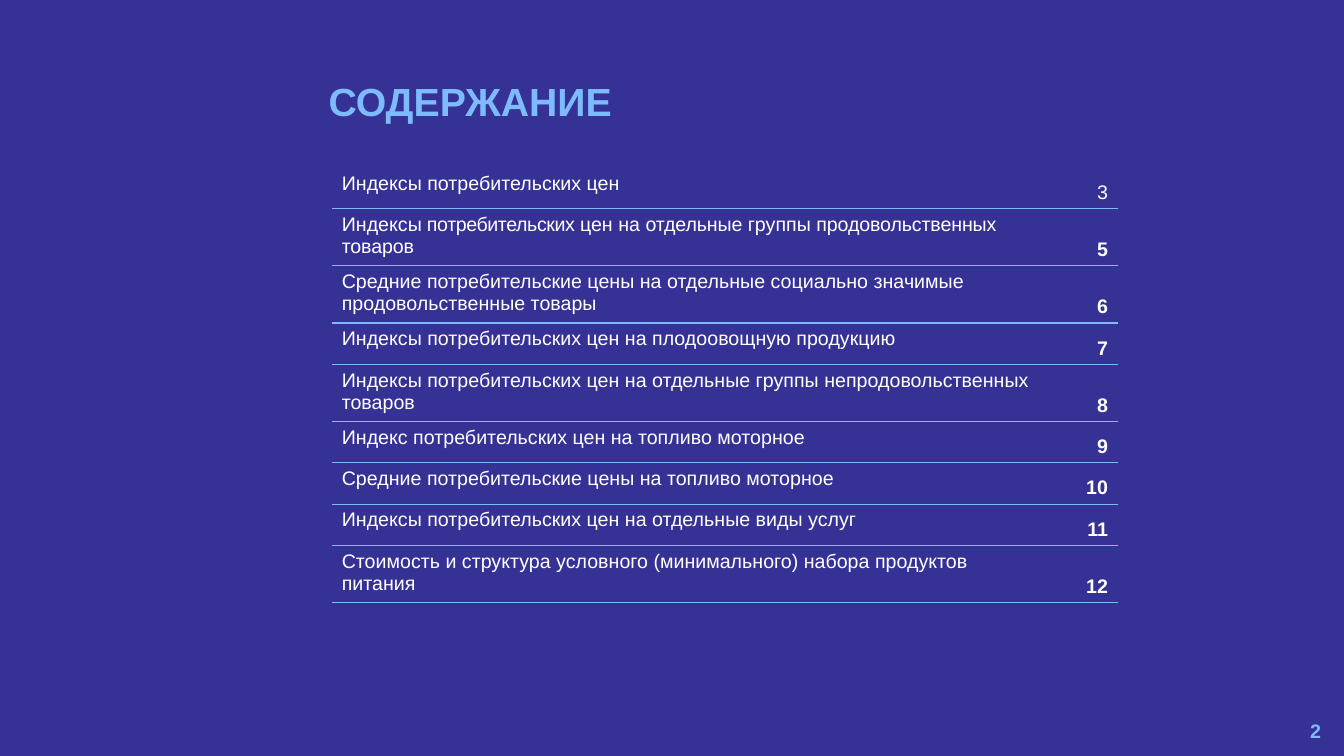
import pptx
import pptx.util
import pptx.dml.color
import pptx.enum.text
import pptx.oxml.ns
import lxml.etree

Inches = pptx.util.Inches
Pt = pptx.util.Pt
RGBColor = pptx.dml.color.RGBColor
PP_ALIGN = pptx.enum.text.PP_ALIGN
MSO_ANCHOR = pptx.enum.text.MSO_ANCHOR
qn = pptx.oxml.ns.qn

INDIGO = RGBColor(0x36, 0x31, 0x94)
SKY = RGBColor(0x7D, 0xBB, 0xFC)
WHITE = RGBColor(0xFF, 0xFF, 0xFF)
FONT = "Arial"

CONTENTS = [
    ([("Индексы потребительских цен", 0)], 3),
    ([("Индексы", 0), (" потребительских ", -30), ("цен на ", 0),
      ("отдельные ", -10), ("группы ", 0),
      ("продовольственных товаров", -10)], 5),
    ([("Средние потребительские цены на отдельные социально значимые "
       "продовольственные товары", 0)], 6),
    ([("Индексы потребительских цен на плодоовощную продукцию", 0)], 7),
    ([("Индексы потребительских цен на отдельные группы "
       "непродовольственных товаров", 0)], 8),
    ([("Индекс потребительских цен на топливо моторное", 0)], 9),
    ([("Средние потребительские цены на топливо моторное", 0)], 10),
    ([("Индексы потребительских цен на отдельные виды услуг", 0)], 11),
    ([("Стоимость и структура условного (минимального) набора "
       "продуктов питания", 0)], 12),
]


def style_run(r, size, color, bold=False):
    r.font.name = FONT
    r.font.size = Pt(size)
    r.font.bold = bold
    r.font.color.rgb = color


def add_label(slide, box, text, size, align, anchor):
    sp = slide.shapes.add_textbox(*[Inches(v) for v in box])
    tf = sp.text_frame
    tf.word_wrap = True
    tf.vertical_anchor = anchor
    tf.text = text
    p = tf.paragraphs[0]
    p.alignment = align
    style_run(p.runs[0], size, SKY, True)
    return p


def add_border(cell, side, color=None):
    ln = lxml.etree.SubElement(cell._tc.get_or_add_tcPr(), qn("a:ln" + side))
    if color is None:
        ln.set("w", "0")
        lxml.etree.SubElement(ln, qn("a:noFill"))
    else:
        ln.set("w", str(Pt(1)))
        fill = lxml.etree.SubElement(ln, qn("a:solidFill"))
        lxml.etree.SubElement(fill, qn("a:srgbClr")).set("val", str(color))


def add_contents(slide, left, top, title_width, page_width, row_height):
    sp = slide.shapes.add_table(
        len(CONTENTS), 2, Inches(left), Inches(top),
        Inches(title_width + page_width), Inches(row_height * len(CONTENTS)))
    table = sp.table
    table.first_row = False
    table.horz_banding = False
    table.columns[0].width = Inches(title_width)
    table.columns[1].width = Inches(page_width)
    for i, (parts, page) in enumerate(CONTENTS):
        table.rows[i].height = Inches(row_height)
        title_cell, page_cell = table.cell(i, 0), table.cell(i, 1)
        for cell in (title_cell, page_cell):
            add_border(cell, "L")
            add_border(cell, "R")
            add_border(cell, "T", SKY if i else None)
            add_border(cell, "B", SKY)
            cell.fill.background()
        p = title_cell.text_frame.paragraphs[0]
        for text, spacing in parts:
            r = p.add_run()
            r.text = text
            style_run(r, 14, WHITE)
            if spacing:
                r.font._element.set("spc", str(spacing))
        page_cell.vertical_anchor = MSO_ANCHOR.BOTTOM
        p = page_cell.text_frame.paragraphs[0]
        p.text = str(page)
        p.alignment = PP_ALIGN.RIGHT
        style_run(p.runs[0], 14, WHITE, i > 0)


def build_contents_slide(prs):
    slide = prs.slides.add_slide(prs.slide_layouts[6])
    slide.background.fill.solid()
    slide.background.fill.fore_color.rgb = INDIGO
    heading = add_label(slide, (3.16, 0.77, 3.51, 0.65), "СОДЕРЖАНИЕ", 28,
                        PP_ALIGN.LEFT, MSO_ANCHOR.TOP)
    heading.line_spacing = 0.9
    add_label(slide, (10.2, 7.05, 3, 0.4), "2", 14,
              PP_ALIGN.RIGHT, MSO_ANCHOR.MIDDLE)
    add_contents(slide, 3.29, 1.66, 7.11, 0.69, 0.41)


def main():
    prs = pptx.Presentation()
    prs.slide_width = Inches(13.33)
    prs.slide_height = Inches(7.5)
    build_contents_slide(prs)
    prs.save("out.pptx")


if __name__ == "__main__":
    main()
